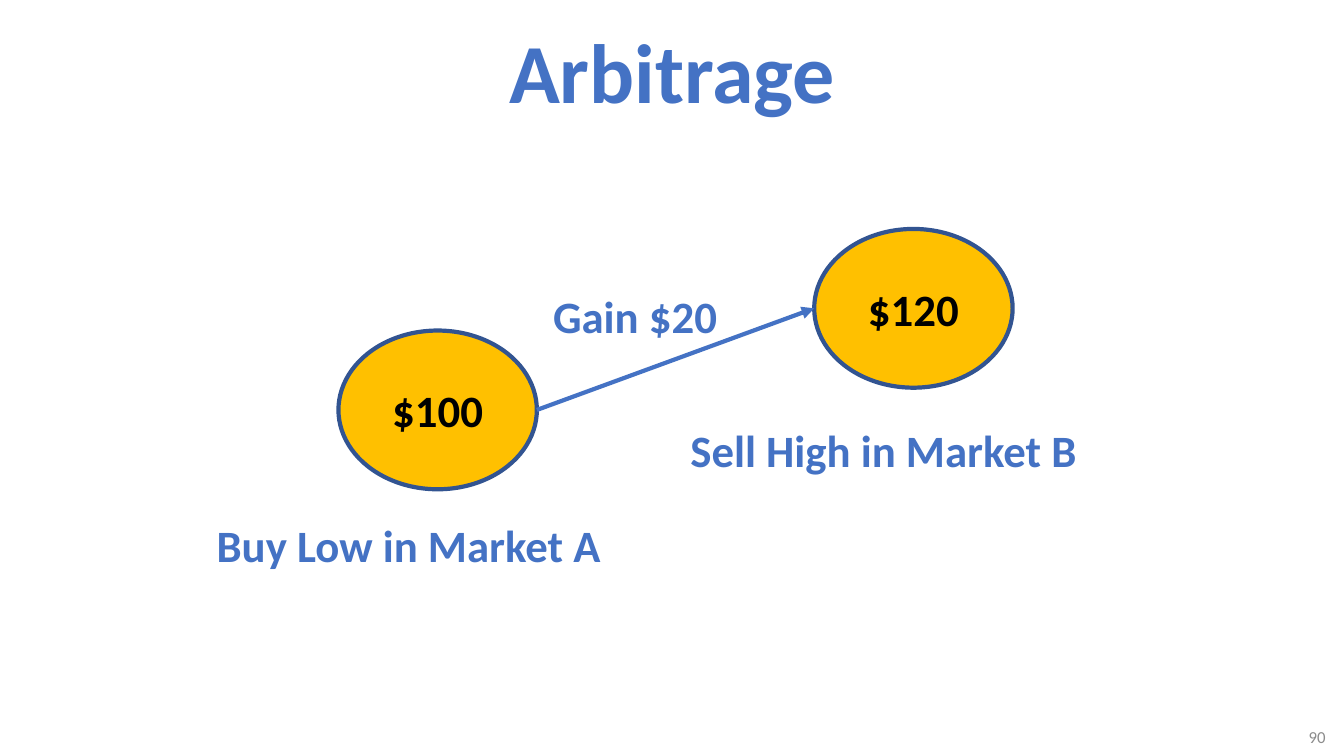
from dataclasses import dataclass

from lxml.etree import SubElement
from pptx import Presentation
from pptx.dml.color import RGBColor
from pptx.enum.shapes import MSO_CONNECTOR, MSO_SHAPE
from pptx.enum.text import MSO_ANCHOR as Anchor, MSO_AUTO_SIZE as AutoSize, PP_ALIGN as Align
from pptx.oxml.ns import qn
from pptx.shapes.autoshape import Shape
from pptx.slide import Slide
from pptx.util import Cm, Pt

BLUE, DARK_BLUE, GOLD, BLACK, GRAY = "4472C4", "325491", "FFC000", "000000", "8C8C8C"
CIRCLE_WIDTH, CIRCLE_HEIGHT = 5.0, 4.0
LABEL_HEIGHT = 1.62
LINE_WIDTH = Pt(3)


@dataclass(frozen=True)
class Price:
    text: str
    left: float
    top: float


@dataclass(frozen=True)
class Label:
    text: str
    left: float
    top: float
    width: float


PRICES = [Price("$100", 8.53, 8.33), Price("$120", 20.52, 5.77)]
LABELS = [
    Label("Gain $20", 13.69, 7.14, 4.67),
    Label("Buy Low in Market A", 5.21, 12.93, 10.31),
    Label("Sell High in Market B", 17.15, 10.52, 10.34),
]


def color(code: str) -> RGBColor:
    return RGBColor.from_string(code)


def write(shape: Shape, text: str, size: int, ink: str, align: Align = Align.CENTER,
          bold: bool = True, **frame_format: object) -> None:
    frame = shape.text_frame
    for name, value in frame_format.items():
        setattr(frame, name, value)
    para = frame.paragraphs[0]
    para.alignment = align
    span = para.add_run()
    span.text = text
    for name, value in {"name": "Calibri", "size": Pt(size), "bold": bold}.items():
        setattr(span.font, name, value)
    span.font.color.rgb = color(ink)


def add_title(page: Slide) -> None:
    title = page.shapes.title
    place = {"left": 5.51, "top": 0, "width": 22.86, "height": 3.53}
    for name, value in place.items():
        setattr(title, name, Cm(value))
    write(title, "Arbitrage", 60, BLUE, vertical_anchor=Anchor.MIDDLE, word_wrap=True)


def add_price(page: Slide, price: Price) -> Shape:
    circle = page.shapes.add_shape(MSO_SHAPE.OVAL, Cm(price.left), Cm(price.top),
                                   Cm(CIRCLE_WIDTH), Cm(CIRCLE_HEIGHT))
    circle.shadow.inherit = False
    circle.fill.solid()
    circle.fill.fore_color.rgb = color(GOLD)
    circle.line.color.rgb = color(DARK_BLUE)
    circle.line.width = LINE_WIDTH
    write(circle, price.text, 32, BLACK, vertical_anchor=Anchor.MIDDLE)
    return circle


def add_arrow(page: Slide, source: Shape, target: Shape) -> None:
    """Join the right side of one circle to the left side of another."""
    arrow = page.shapes.add_connector(
        MSO_CONNECTOR.STRAIGHT,
        source.left + source.width, source.top + source.height // 2,
        target.left, target.top + target.height // 2)
    arrow.line.color.rgb = color(BLUE)
    arrow.line.width = LINE_WIDTH
    properties = arrow._element.spPr
    SubElement(properties.find(qn("a:ln")), qn("a:tailEnd"), type="triangle")
    SubElement(properties, qn("a:effectLst"))


def add_label(page: Slide, label: Label) -> None:
    box = page.shapes.add_textbox(Cm(label.left), Cm(label.top), Cm(label.width), Cm(LABEL_HEIGHT))
    write(box, label.text, 32, BLUE, Align.LEFT, word_wrap=False,
          auto_size=AutoSize.SHAPE_TO_FIT_TEXT)


def add_page_number(page: Slide) -> None:
    box = page.shapes.add_textbox(Cm(30.99), Cm(18.24), Cm(2.67), Cm(0.66))
    write(box, "90", 12, GRAY, Align.RIGHT, bold=False,
          vertical_anchor=Anchor.MIDDLE, word_wrap=True)


def main() -> None:
    deck = Presentation()
    deck.slide_width, deck.slide_height = Cm(33.87), Cm(19.05)
    page = deck.slides.add_slide(deck.slide_layouts[5])
    add_page_number(page)
    add_title(page)
    buy, sell = [add_price(page, price) for price in PRICES]
    add_arrow(page, buy, sell)
    for label in LABELS:
        add_label(page, label)
    deck.save("out.pptx")


if __name__ == "__main__":
    main()
